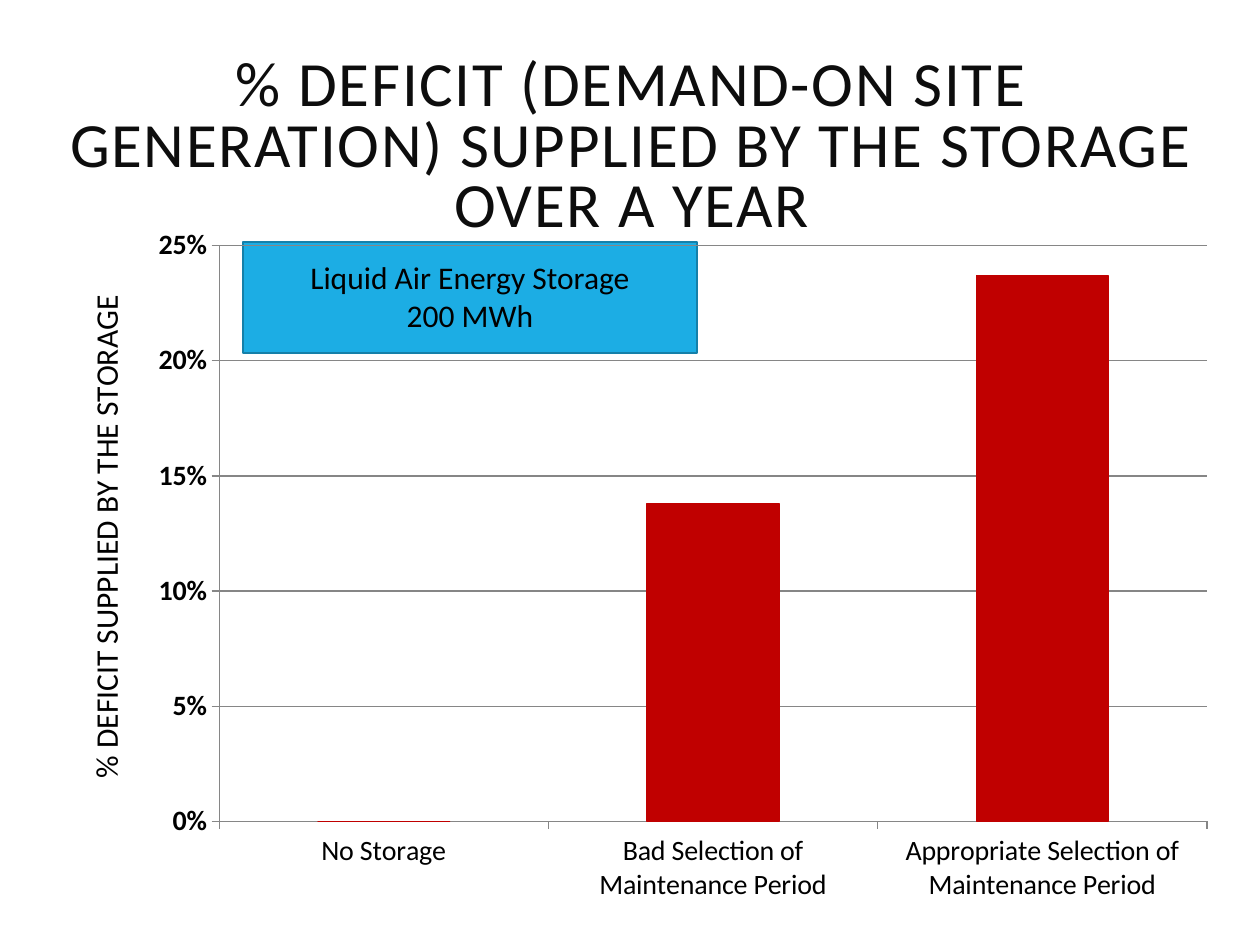
"""Build a slide with a column chart of the deficit supplied by storage."""
import pptx
import pptx.chart.data
import pptx.dml.color
import pptx.enum.chart
import pptx.enum.shapes
import pptx.enum.text
import pptx.oxml
import pptx.oxml.ns
import pptx.util

Inches = pptx.util.Inches
Pt = pptx.util.Pt
RGBColor = pptx.dml.color.RGBColor

BLACK = RGBColor(0x00, 0x00, 0x00)
INK = RGBColor(0x0D, 0x0D, 0x0D)
BLUE = RGBColor(0x1C, 0xAD, 0xE4)
EDGE = RGBColor(0x15, 0x80, 0xA9)
RED = RGBColor(0xC0, 0x00, 0x00)
GREY = RGBColor(0x86, 0x86, 0x86)
FACE = "Calibri"

TITLE = "% DEFICIT (DEMAND-ON SITE GENERATION) SUPPLIED BY THE STORAGE OVER A YEAR"
LABEL = ["Liquid Air Energy Storage", "200 MWh"]
AXIS = "% DEFICIT SUPPLIED BY THE STORAGE"
SHARES = {
    "No Storage": 0,
    "Bad Selection of Maintenance Period": 0.138,
    "Appropriate Selection of Maintenance Period": 0.237,
}
WIDE, HIGH = 9.27, 5.57


def set_font(font, size, color=BLACK, bold=False):
    font.name, font.size, font.bold = FACE, Pt(size), bold
    font.color.rgb = color


def set_line(line, color, width):
    line.color.rgb = color
    line.width = Pt(width)


def fill_title(shape):
    shape.left, shape.top = Inches(0.25), Inches(0.4)
    shape.width, shape.height = Inches(9.53), Inches(1.57)
    frame = shape.text_frame
    frame.text = TITLE
    frame.auto_size = pptx.enum.text.MSO_AUTO_SIZE.NONE
    frame.vertical_anchor = pptx.enum.text.MSO_ANCHOR.MIDDLE
    para = frame.paragraphs[0]
    para.alignment = pptx.enum.text.PP_ALIGN.CENTER
    para.line_spacing = 0.8
    set_font(para.font, 36, INK)
    para.runs[0].font._element.set("spc", "100")


def add_panel(slide):
    kind = pptx.enum.shapes.MSO_SHAPE.RECTANGLE
    panel = slide.shapes.add_shape(
        kind, Inches(1.93), Inches(1.92), Inches(3.6), Inches(0.88))
    panel.shadow.inherit = False
    panel.fill.solid()
    panel.fill.fore_color.rgb = BLUE
    set_line(panel.line, EDGE, 1.25)


def add_label(slide):
    box = slide.shapes.add_textbox(
        Inches(2.14), Inches(2), Inches(3.18), Inches(1.01))
    frame = box.text_frame
    frame.word_wrap = True
    frame.text = "\n".join(LABEL)
    for para in frame.paragraphs:
        para.alignment = pptx.enum.text.PP_ALIGN.CENTER
        set_font(para.font, 18)


def style_axis(axis, bold=False):
    axis.major_tick_mark = pptx.enum.chart.XL_TICK_MARK.OUTSIDE
    axis.minor_tick_mark = pptx.enum.chart.XL_TICK_MARK.NONE
    set_line(axis.format.line, GREY, 0.75)
    set_font(axis.tick_labels.font, 16, bold=bold)


def place(part, index, values):
    for old in part.findall(pptx.oxml.ns.qn("c:layout")):
        part.remove(old)
    body = "".join(f'<c:{tag} val="{val}"/>' for tag, val in values.items())
    part.insert(index, pptx.oxml.parse_xml(
        f'<c:layout {pptx.oxml.ns.nsdecls("c")}>'
        f"<c:manualLayout>{body}</c:manualLayout></c:layout>"))


def add_columns(slide):
    data = pptx.chart.data.CategoryChartData(number_format="0%")
    data.categories = list(SHARES)
    data.add_series("Series 1", list(SHARES.values()))
    chart = slide.shapes.add_chart(
        pptx.enum.chart.XL_CHART_TYPE.COLUMN_CLUSTERED,
        Inches(0.5), Inches(1.7), Inches(WIDE), Inches(HIGH), data).chart
    chart.has_title = False
    chart.has_legend = False
    set_font(chart.font, 10)
    plot = chart.plots[0]
    plot.gap_width = 150
    plot.vary_by_categories = False
    series = plot.series[0]
    series.invert_if_negative = False
    series.format.fill.solid()
    series.format.fill.fore_color.rgb = RED
    set_line(series.format.line, RED, 0.75)
    style_axis(chart.category_axis)
    scale = chart.value_axis
    style_axis(scale, bold=True)
    scale.minimum_scale, scale.maximum_scale = 0, 0.25
    scale.major_unit = 0.05
    scale.tick_labels.number_format = "0%"
    scale.tick_labels.number_format_is_linked = False
    scale.has_major_gridlines = True
    set_line(scale.major_gridlines.format.line, GREY, 0.75)
    title = scale.axis_title
    title.text_frame.text = AXIS
    set_font(title.text_frame.paragraphs[0].font, 18)
    edges = {"xMode": "edge", "yMode": "edge"}
    place(title._element, 1, {**edges, "x": 0.12 / WIDE, "y": 0.6 / HIGH})
    place(chart._chartSpace.chart.plotArea, 0, {
        "layoutTarget": "inner", **edges, "x": 1.24 / WIDE, "y": 0.25 / HIGH,
        "w": 7.84 / WIDE, "h": 4.57 / HIGH})


def main():
    deck = pptx.Presentation()
    deck.slide_width, deck.slide_height = Inches(10), Inches(7.5)
    slide = deck.slides.add_slide(deck.slide_layouts[5])
    fill_title(slide.shapes.title)
    add_panel(slide)
    add_label(slide)
    add_columns(slide)
    deck.save("out.pptx")


if __name__ == "__main__":
    main()
